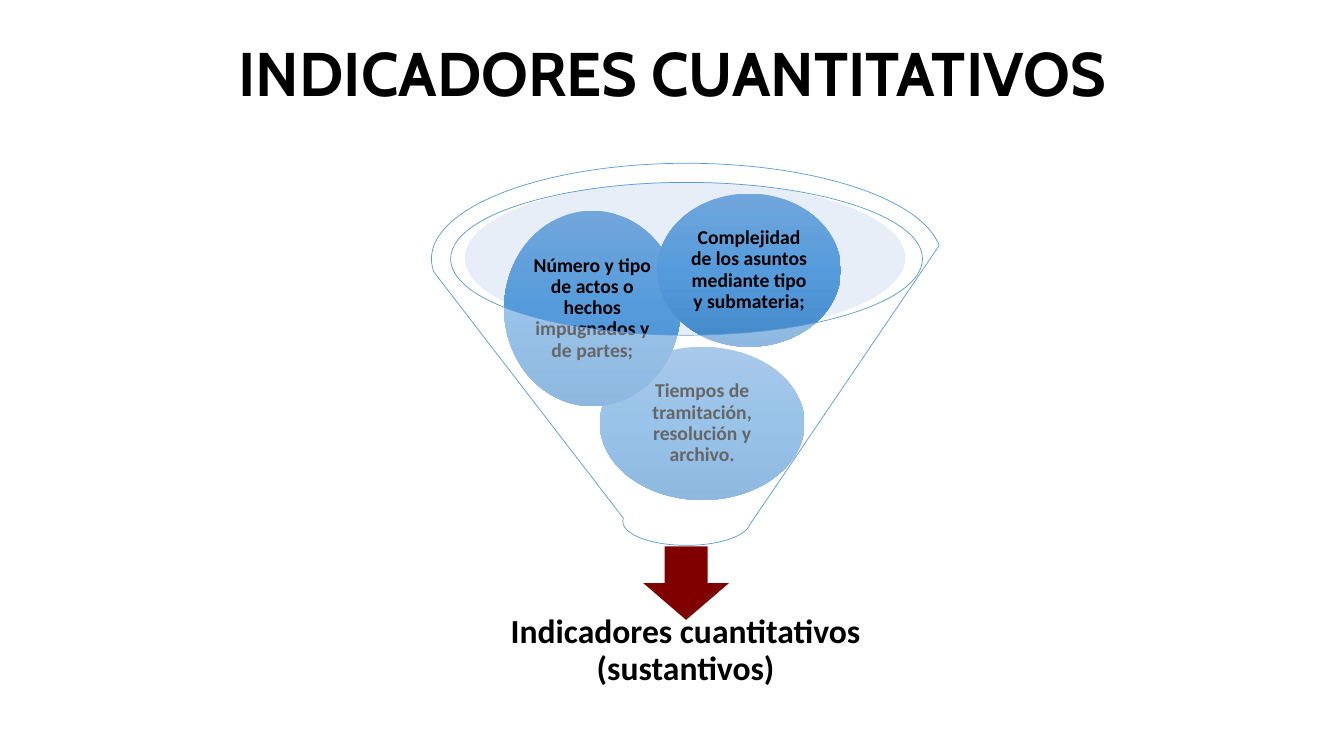
from copy import deepcopy
from dataclasses import dataclass

from lxml import etree
from pptx import Presentation
from pptx.dml.color import RGBColor
from pptx.enum.shapes import MSO_SHAPE
from pptx.enum.text import MSO_ANCHOR, PP_ALIGN
from pptx.oxml.ns import qn
from pptx.util import Inches, Pt

OVAL = MSO_SHAPE.OVAL
FUNNEL = MSO_SHAPE.FUNNEL
DOWN_ARROW = MSO_SHAPE.DOWN_ARROW
CENTER = PP_ALIGN.CENTER
MIDDLE = MSO_ANCHOR.MIDDLE

BLACK = "000000"
BALL_GRADIENT = [(0, "71A6DB"), (0.5, "559BDB"), (1, "448ACA")]


@dataclass
class Place:
    left: float
    top: float
    width: float
    height: float

    def lengths(self) -> list:
        return [Inches(n) for n in (self.left, self.top, self.width, self.height)]


@dataclass
class Ball:
    text: str
    place: Place


BALLS = [
    Ball("Tiempos de tramitación, resolución y archivo.", Place(5.95, 3.44, 2.03, 1.52)),
    Ball("Número y tipo de actos o hechos impugnados y de partes;", Place(5, 2.09, 1.75, 1.94)),
    Ball("Complejidad de los asuntos mediante tipo y submateria;", Place(6.52, 1.92, 1.82, 1.52)),
]


def color(value: str) -> RGBColor:
    return RGBColor.from_string(value)


def apply_format(target, values: dict) -> None:
    for name, value in values.items():
        setattr(target, name, value)


def write(shape, text: str, size: float, font: str, inset_x: float, inset_y: float) -> None:
    frame = shape.text_frame
    apply_format(frame, {
        "word_wrap": True, "vertical_anchor": MIDDLE,
        "margin_left": Inches(inset_x), "margin_right": Inches(inset_x),
        "margin_top": Inches(inset_y), "margin_bottom": Inches(inset_y),
    })
    para = frame.paragraphs[0]
    apply_format(para, {"alignment": CENTER, "line_spacing": 0.9})
    span = para.add_run()
    span.text = text
    apply_format(span.font, {"size": Pt(size), "name": font, "bold": True})
    span.font.color.rgb = color(BLACK)


def add_label(page, place: Place, text: str, size: float, font: str,
              inset_x: float, inset_y: float) -> None:
    box = page.shapes.add_textbox(*place.lengths())
    write(box, text, size, font, inset_x, inset_y)


def add_plain_shape(page, kind, place: Place):
    shape = page.shapes.add_shape(kind, *place.lengths())
    shape.shadow.inherit = False
    shape.line.fill.background()
    return shape


def add_solid_shape(page, kind, place: Place, fill: str, opacity: int = 100):
    shape = add_plain_shape(page, kind, place)
    shape.fill.solid()
    shape.fill.fore_color.rgb = color(fill)
    if opacity < 100:
        tint = shape._element.spPr.find(qn("a:solidFill"))[0]
        etree.SubElement(tint, qn("a:alpha")).set("val", str(opacity * 1000))
    return shape


def add_ball(page, ball: Ball) -> None:
    shape = add_plain_shape(page, OVAL, ball.place)
    shape.fill.gradient()
    shape.fill.gradient_angle = 270
    stop_list = shape._element.spPr.find(qn("a:gradFill")).find(qn("a:gsLst"))
    stop_list.insert(1, deepcopy(stop_list[0]))
    for stop, (position, tone) in zip(shape.fill.gradient_stops, BALL_GRADIENT):
        stop.position = position
        stop.color.rgb = color(tone)
    write(shape, ball.text, 14, "Calibri", 0.02, 0.02)


def main() -> None:
    """Build the funnel slide of quantitative indicators."""
    deck = Presentation()
    apply_format(deck, {"slide_width": Inches(13.33), "slide_height": Inches(7.5)})
    page = deck.slides.add_slide(deck.slide_layouts[6])

    add_label(page, Place(0.92, 0.4, 11.5, 0.71), "INDICADORES CUANTITATIVOS",
              44, "Cabin", 0.1, 0.05)
    add_solid_shape(page, OVAL, Place(4.61, 1.8, 4.37, 1.52), "C4D5EB", 40)
    add_solid_shape(page, DOWN_ARROW, Place(6.38, 5.42, 0.85, 0.73), "800000")
    add_label(page, Place(4.77, 5.95, 4.06, 1.02), "Indicadores cuantitativos (sustantivos)",
              24, "Calibri", 0.19, 0.19)
    for ball in BALLS:
        add_ball(page, ball)
    funnel = add_solid_shape(page, FUNNEL, Place(4.28, 1.62, 5.06, 3.79), "FFFFFF", 40)
    funnel.line.color.rgb = color("5B9BD5")
    funnel.line.width = Pt(0.5)

    deck.save("out.pptx")


if __name__ == "__main__":
    main()
